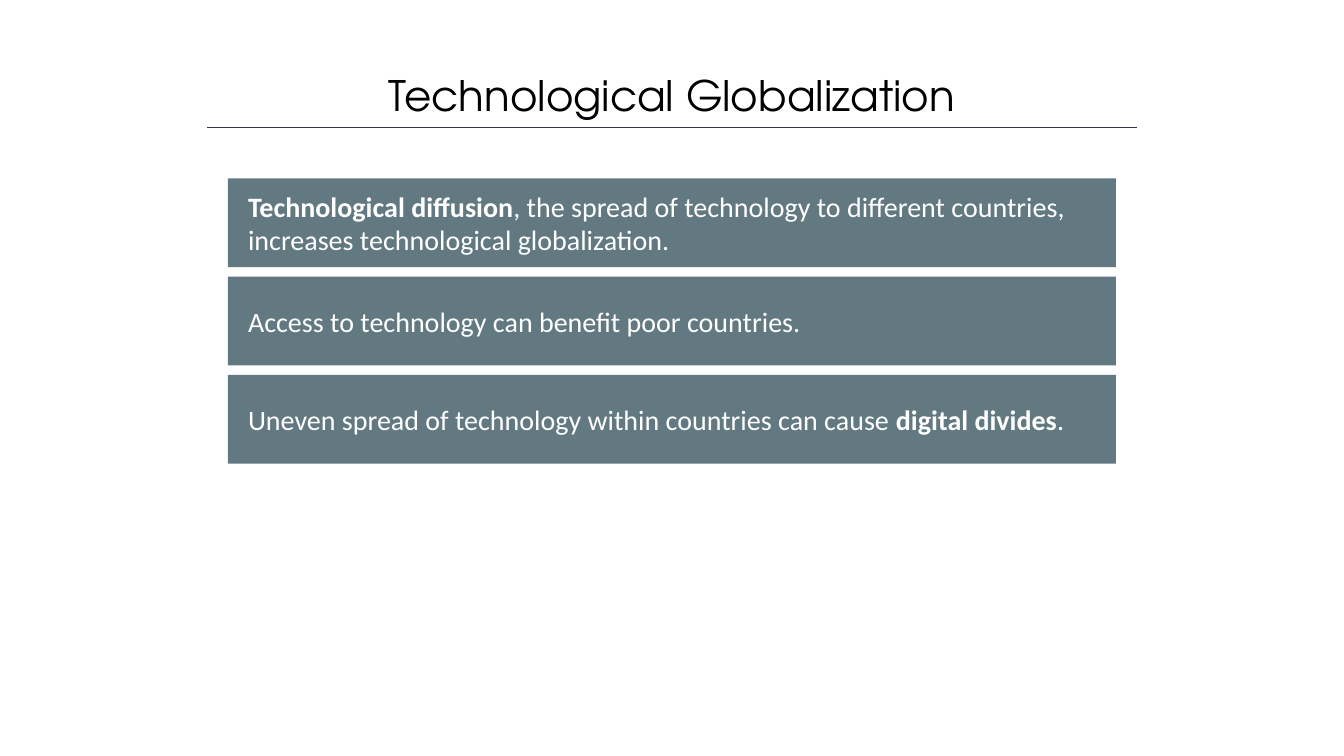
from lxml import etree
from pptx import Presentation
from pptx.dml.color import RGBColor
from pptx.enum.shapes import MSO_CONNECTOR, MSO_SHAPE
from pptx.enum.text import MSO_ANCHOR as Anchor, PP_ALIGN as Align
from pptx.oxml.ns import qn
from pptx.util import Pt

BLACK = RGBColor(0x00, 0x00, 0x00)
WHITE = RGBColor(0xFF, 0xFF, 0xFF)
SLATE = RGBColor(0x62, 0x79, 0x81)
RULE_COLOR = RGBColor(0x32, 0x35, 0x42)

BAR_LEFT, BAR_TOP = 162.8, 127.4
BAR_WIDTH, BAR_HEIGHT = 634.4, 63.4
BAR_PITCH = 70.2

STATEMENTS = [
    [("Technological diffusion", True),
     (", the spread of technology to different countries, "
      "increases technological globalization.", False)],
    [("Access to technology can benefit poor countries.", False)],
    [("Uneven spread of technology within countries can cause ", False),
     ("digital divides", True), (".", False)],
]


def format_font(font, name, size, color, bold=False):
    font.name = name
    font.size = Pt(size)
    font.color.rgb = color
    font.bold = bold


def set_title(page, text):
    title = page.shapes.title
    title.left, title.top = Pt(120), Pt(45.4)
    title.width, title.height = Pt(720), Pt(44)
    frame = title.text_frame
    frame.text = text
    frame.word_wrap = True
    frame.vertical_anchor = Anchor.MIDDLE
    para = frame.paragraphs[0]
    para.alignment = Align.CENTER
    format_font(para.runs[0].font, "TeX Gyre Adventor", 30, BLACK)


def add_rule(page, left, right, y):
    rule = page.shapes.add_connector(
        MSO_CONNECTOR.STRAIGHT, Pt(left), Pt(y), Pt(right), Pt(y))
    rule.line.color.rgb = RULE_COLOR
    rule.line.width = Pt(1)
    etree.SubElement(rule._element.spPr, qn("a:effectLst"))


def add_bar(page, top, spans):
    bar = page.shapes.add_shape(
        MSO_SHAPE.RECTANGLE, Pt(BAR_LEFT), Pt(top), Pt(BAR_WIDTH), Pt(BAR_HEIGHT))
    bar.shadow.inherit = False
    bar.fill.solid()
    bar.fill.fore_color.rgb = SLATE
    bar.line.fill.background()
    frame = bar.text_frame
    frame.word_wrap = True
    frame.vertical_anchor = Anchor.MIDDLE
    frame.margin_left, frame.margin_right = Pt(14.4), Pt(19.4)
    para = frame.paragraphs[0]
    para.alignment = Align.LEFT
    for text, bold in spans:
        span = para.add_run()
        span.text = text
        format_font(span.font, "Calibri", 20, WHITE, bold)


def main():
    deck = Presentation()
    deck.slide_width, deck.slide_height = Pt(960), Pt(540)
    page = deck.slides.add_slide(deck.slide_layouts.get_by_name("Title Only"))
    set_title(page, "Technological Globalization")
    add_rule(page, 148, 812, 90.9)
    for index, spans in enumerate(STATEMENTS):
        add_bar(page, BAR_TOP + index * BAR_PITCH, spans)
    deck.save("out.pptx")


if __name__ == "__main__":
    main()
